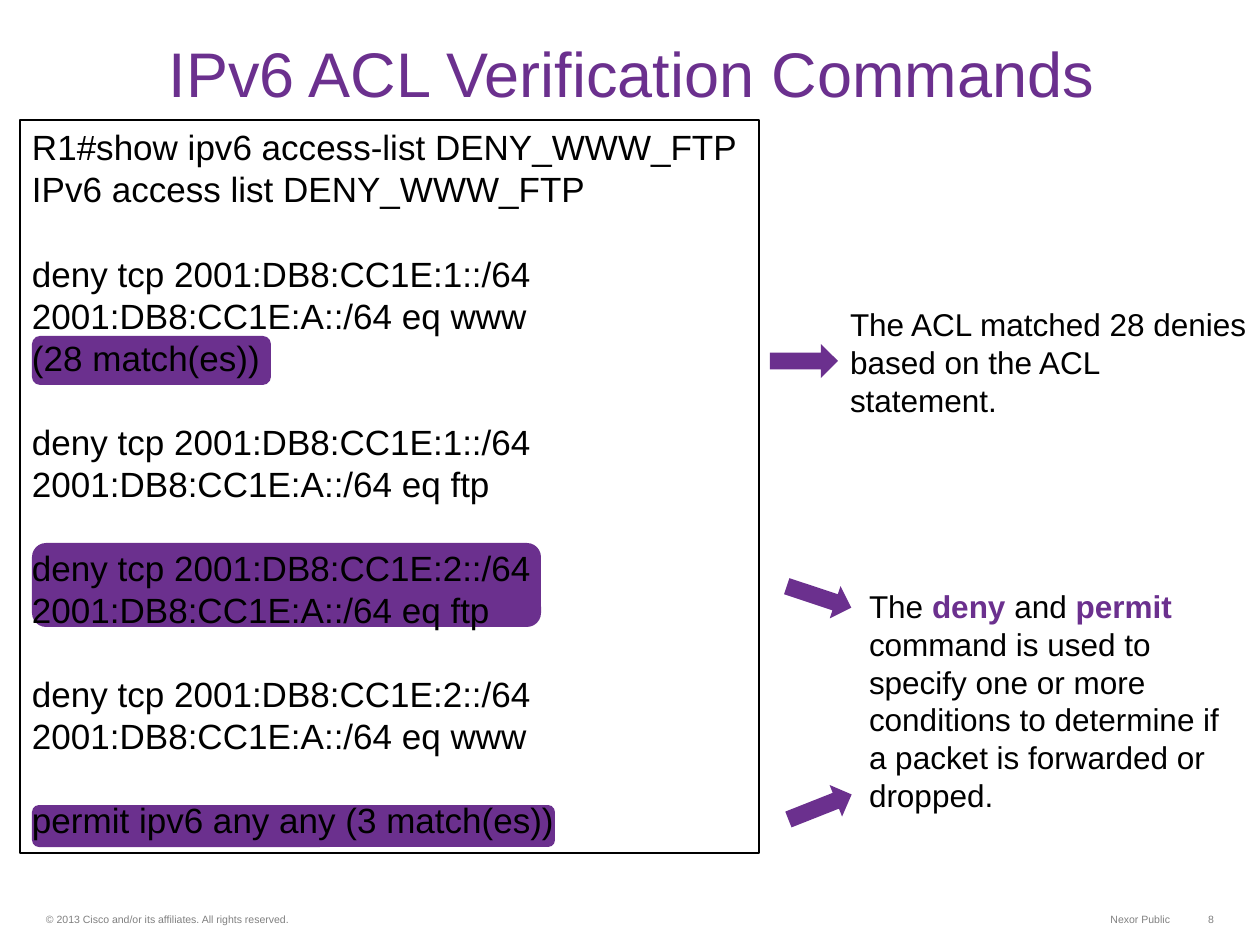
from dataclasses import dataclass

from pptx import Presentation
from pptx.dml.color import RGBColor
from pptx.enum.shapes import MSO_SHAPE
from pptx.enum.text import MSO_ANCHOR, PP_ALIGN
from pptx.util import Emu, Pt

PX = 914400 / 126
RECTANGLE = MSO_SHAPE.RECTANGLE
ROUNDED = MSO_SHAPE.ROUNDED_RECTANGLE
ARROW = MSO_SHAPE.RIGHT_ARROW
TOP, BOTTOM = MSO_ANCHOR.TOP, MSO_ANCHOR.BOTTOM
LEFT, CENTER, RIGHT = PP_ALIGN.LEFT, PP_ALIGN.CENTER, PP_ALIGN.RIGHT
COLORS = {"purple": "6B308E", "black": "000000", "gray": "808080"}
FONT = "Arial"
CODE_SIZE, NOTE_SIZE = 20, 18
LEADING = 1.2


@dataclass(frozen=True)
class Area:
    left: int
    top: int
    width: int
    height: int

    def emu(self) -> list[Emu]:
        return [Emu(round(n * PX)) for n in (self.left, self.top, self.width, self.height)]


@dataclass(frozen=True)
class Arrow:
    area: Area
    rotation: float = 0


@dataclass(frozen=True)
class Label:
    text: str
    area: Area
    size: int
    color: str
    align: PP_ALIGN = LEFT
    inset: int = 6


@dataclass(frozen=True)
class Note:
    area: Area
    spans: tuple[tuple[str, bool], ...]


LABELS = [
    Label("© 2013 Cisco and/or its affiliates. All rights reserved.",
          Area(34, 907, 471, 24), 6, "gray", inset=5),
    Label("Nexor Public", Area(1060, 907, 122, 24), 6, "gray", RIGHT, 5),
    Label("8", Area(1166, 907, 60, 24), 6, "gray", RIGHT, 5),
    Label("IPv6 ACL Verification Commands", Area(40, 0, 1183, 116), 36, "purple", CENTER),
]
HIGHLIGHTS = [
    Area(32, 805, 523, 42),
    Area(32, 543, 509, 84),
    Area(32, 336, 239, 49),
]
ARROWS = [
    Arrow(Area(770, 344, 68, 34)),
    Arrow(Area(785, 580, 68, 34), 18.4),
    Arrow(Area(786, 790, 68, 34), 338.4),
]
NOTES = [
    Note(Area(838, 299, 422, 127),
         (("The ACL matched 28 denies based on the ACL statement.", False),)),
    Note(Area(857, 581, 384, 242),
         (("The ", False), ("deny ", True), ("and ", False), ("permit", True),
          (" command is used to specify one or more conditions to determine if "
           "a packet is forwarded or dropped.", False))),
]
CODE_AREA = Area(20, 120, 739, 733)
CODE_BLOCKS = [
    ["R1#show ipv6 access-list DENY_WWW_FTP", "IPv6 access list DENY_WWW_FTP"],
    ["deny tcp 2001:DB8:CC1E:1::/64 2001:DB8:CC1E:A::/64 eq www", "(28 match(es))"],
    ["deny tcp 2001:DB8:CC1E:1::/64 2001:DB8:CC1E:A::/64 eq ftp"],
    ["deny tcp 2001:DB8:CC1E:2::/64 2001:DB8:CC1E:A::/64 eq ftp"],
    ["deny tcp 2001:DB8:CC1E:2::/64 2001:DB8:CC1E:A::/64 eq www"],
    ["permit ipv6 any any (3 match(es))"],
]


def color(name: str) -> RGBColor:
    return RGBColor.from_string(COLORS[name])


def set_frame(frame, inset: int = 6, anchor: MSO_ANCHOR = TOP) -> None:
    frame.word_wrap = True
    frame.vertical_anchor = anchor
    frame.margin_left = frame.margin_right = Emu(round(12 * PX))
    frame.margin_top = frame.margin_bottom = Emu(round(inset * PX))


def style(para, size: int, name: str, align: PP_ALIGN = LEFT) -> None:
    para.alignment = align
    para.font.name = FONT
    para.font.size = Pt(size)
    para.font.color.rgb = color(name)


def add_label(page, label: Label) -> None:
    box = page.shapes.add_textbox(*label.area.emu())
    set_frame(box.text_frame, label.inset, BOTTOM)
    para = box.text_frame.paragraphs[0]
    para.text = label.text
    style(para, label.size, label.color, label.align)


def add_solid(page, kind: MSO_SHAPE, area: Area, rotation: float = 0) -> None:
    shape = page.shapes.add_shape(kind, *area.emu())
    shape.shadow.inherit = False
    shape.fill.solid()
    shape.fill.fore_color.rgb = color("purple")
    shape.line.fill.background()
    shape.rotation = rotation


def add_note(page, note: Note) -> None:
    """Add a text box whose flagged spans are bold and purple."""
    box = page.shapes.add_textbox(*note.area.emu())
    set_frame(box.text_frame)
    para = box.text_frame.paragraphs[0]
    style(para, NOTE_SIZE, "black")
    para.line_spacing = Pt(NOTE_SIZE * LEADING)
    for text, strong in note.spans:
        span = para.add_run()
        span.text = text
        span.font.name = FONT
        span.font.size = Pt(NOTE_SIZE)
        span.font.bold = strong
        span.font.color.rgb = color("purple" if strong else "black")


def add_code(page) -> None:
    """Add the outlined listing, with one line of space between blocks."""
    box = page.shapes.add_shape(RECTANGLE, *CODE_AREA.emu())
    box.shadow.inherit = False
    box.fill.background()
    box.line.color.rgb = color("black")
    box.line.width = Pt(0.75)
    frame = box.text_frame
    set_frame(frame)
    pitch = Pt(CODE_SIZE * LEADING)
    for block_index, block in enumerate(CODE_BLOCKS):
        for line_index, line in enumerate(block):
            first = block_index == line_index == 0
            para = frame.paragraphs[0] if first else frame.add_paragraph()
            para.text = line
            para.line_spacing = pitch
            if block_index and line_index == 0:
                para.space_before = pitch
            style(para, CODE_SIZE, "black")


def main() -> None:
    deck = Presentation()
    deck.slide_width, deck.slide_height = Area(0, 0, 1260, 945).emu()[2:]
    page = deck.slides.add_slide(deck.slide_layouts[6])
    for label in LABELS:
        add_label(page, label)
    for area in HIGHLIGHTS:
        add_solid(page, ROUNDED, area)
    add_code(page)
    for note in NOTES:
        add_note(page, note)
    for arrow in ARROWS:
        add_solid(page, ARROW, arrow.area, arrow.rotation)
    deck.save("out.pptx")


if __name__ == "__main__":
    main()
